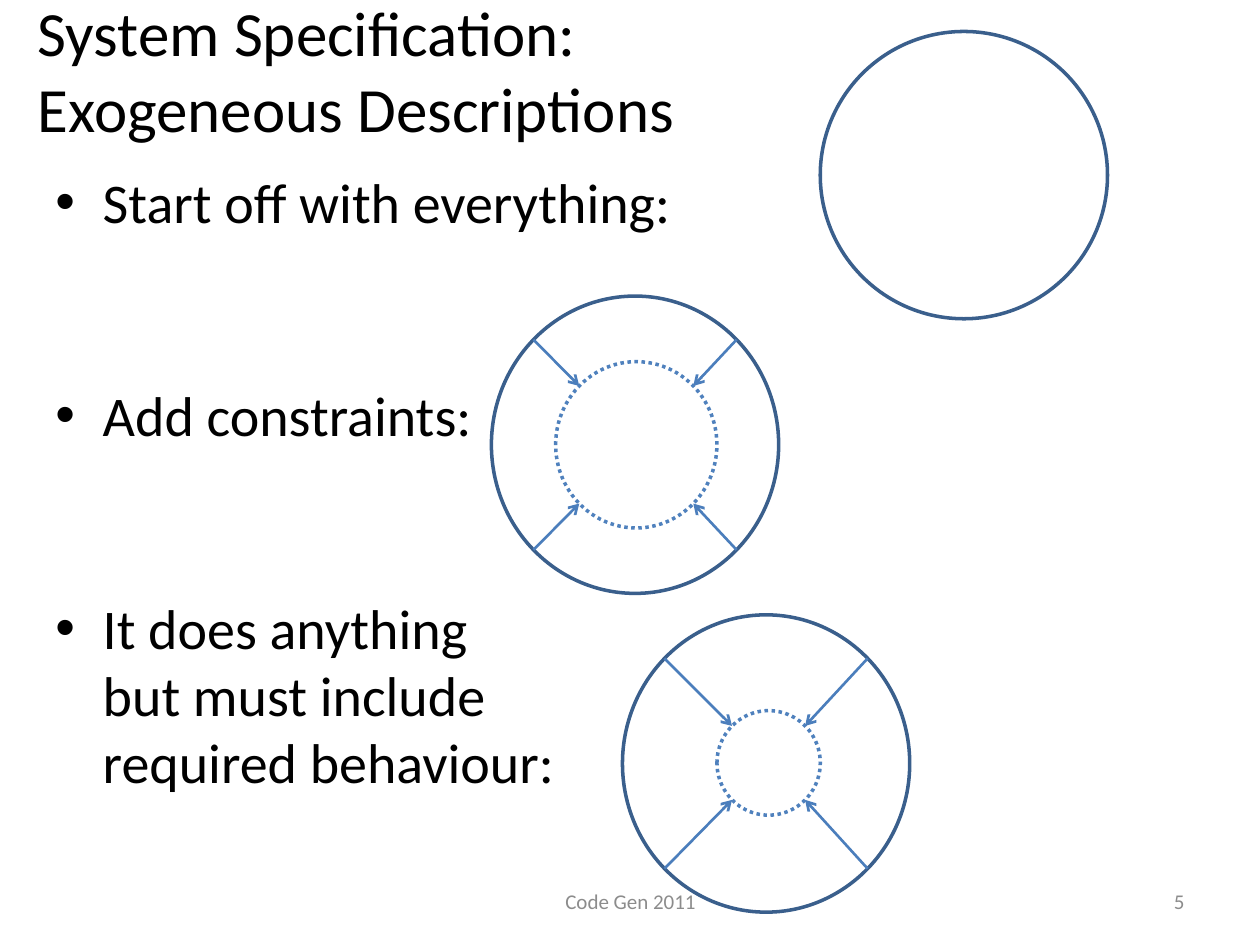
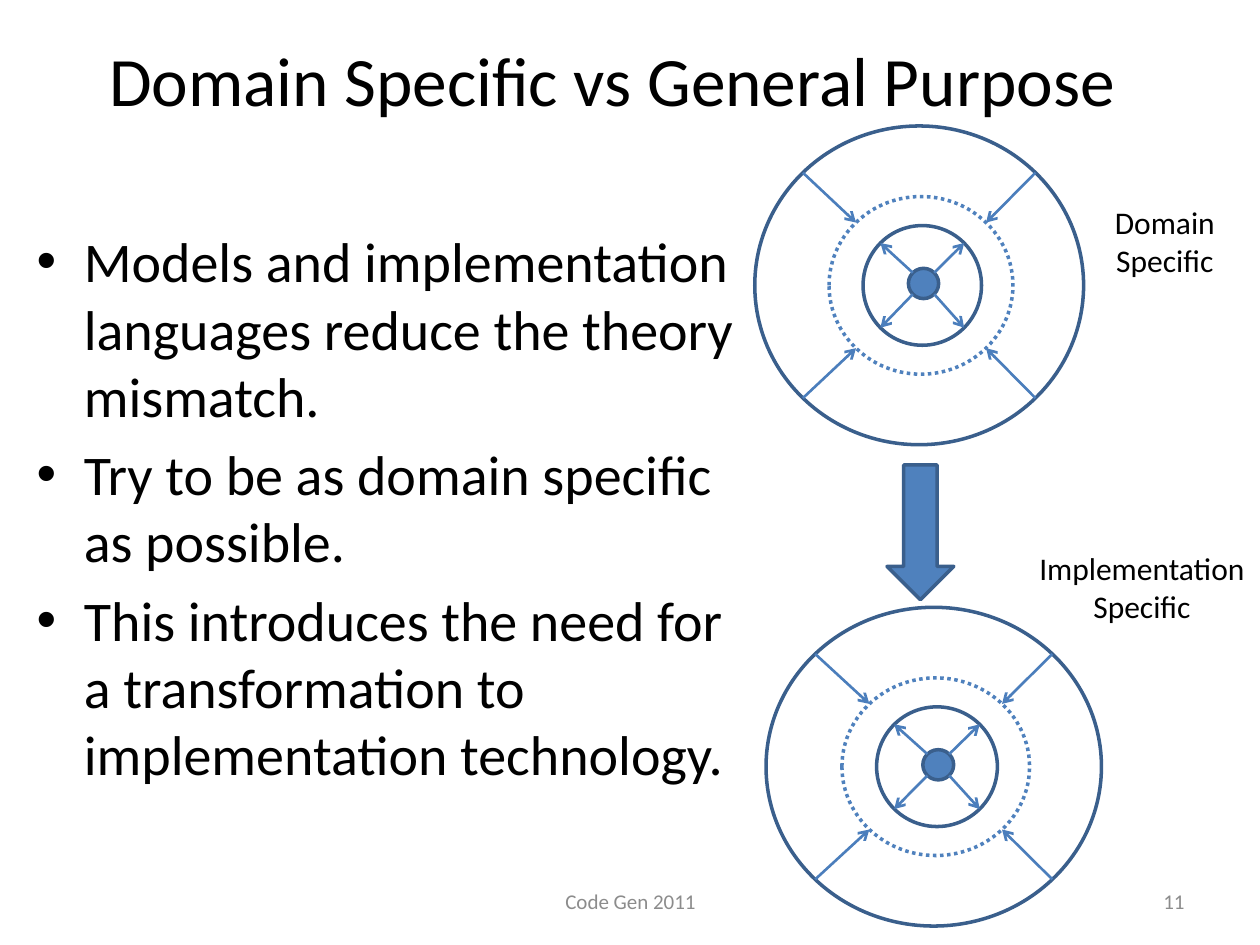
from math import sqrt

from lxml.etree import SubElement
from pptx import Presentation
from pptx.dml.color import RGBColor
from pptx.enum.dml import MSO_LINE_DASH_STYLE as Dash
from pptx.enum.shapes import MSO_CONNECTOR as Connector, MSO_SHAPE as Shape
from pptx.enum.text import MSO_ANCHOR as Anchor, MSO_AUTO_SIZE as AutoSize, PP_ALIGN as Align
from pptx.oxml.ns import qn
from pptx.util import Inches, Pt

COLUMNS, ROWS = 10, 7.5
CELL = Inches(1)  # the slide is a grid of square cells

BLACK = RGBColor(0x00, 0x00, 0x00)
GREY = RGBColor(0x8C, 0x8C, 0x8C)
OUTLINE = RGBColor(0x3A, 0x5F, 0x8C)
ACCENT = RGBColor(0x4F, 0x81, 0xBD)
ARROW = RGBColor(0x4B, 0x7E, 0xBC)

FONT = "Calibri"
FOOTER = "Code Gen 2011"
FOOTER_ROW, FOOTER_HEIGHT = 6.95, 0.4
BODY_SIZE = 32
LINE_HEIGHT = 1.2
BODY_SPACING = 0.2

# Share of an ellipse's half axis at which its diagonal point lies
DIAGONAL = 1 / sqrt(2)
CORNERS = ((1, -1), (1, 1), (-1, -1), (-1, 1))

# Nested ellipses of a full wheel, measured from the left and top of the outer one
WHEEL = {
    "outer": (0, 0, 2.61, 2.53),
    "limit": (0.59, 0.56, 1.46, 1.41),
    "core": (1.22, 1.13, 0.24, 0.24),
    "reach": (0.86, 0.79, 0.94, 0.95),
}


def cells(*lengths):
    return [round(length * CELL) for length in lengths]


def apply(target, values):
    for name, value in values.items():
        setattr(target, name, value)


def write(para, text, size, color=BLACK, align=None):
    para.text = text
    para.alignment = align
    for span in para.runs:
        apply(span.font, {"name": FONT, "size": Pt(size)})
        span.font.color.rgb = color
    for line_break in para._p.findall(qn("a:br")):
        SubElement(line_break, qn("a:rPr"), sz=str(round(size * 100)))


def place(box, frame):
    apply(box, dict(zip(("left", "top", "width", "height"), cells(*frame))))


def add_title(page, text, frame, size, align):
    title = page.shapes.title
    place(title, frame)
    apply(title.text_frame, {"vertical_anchor": Anchor.MIDDLE, "auto_size": AutoSize.NONE})
    write(title.text_frame.paragraphs[0], text, size, align=align)


def add_bullets(page, items, frame, skipped_lines=0):
    """Fill the body; skipped_lines widens the gap between items by whole lines."""
    body = page.placeholders[1]
    place(body, frame)
    frame = body.text_frame
    frame.auto_size = AutoSize.NONE
    for number, item in enumerate(items):
        para = frame.add_paragraph() if number else frame.paragraphs[0]
        write(para, item, BODY_SIZE)
        if number and skipped_lines:
            para.space_before = Pt(BODY_SIZE * (skipped_lines * LINE_HEIGHT + BODY_SPACING))


def add_text(page, lines, frame, size, color, aligns, **format_values):
    box = page.shapes.add_textbox(*cells(*frame))
    apply(box.text_frame, format_values)
    for number, (line, align) in enumerate(zip(lines, aligns)):
        para = box.text_frame.add_paragraph() if number else box.text_frame.paragraphs[0]
        write(para, line, size, color, align)


def add_footer(page, number):
    for text, left, width, align in (
        (number, 7.17, 2.33, Align.RIGHT),
        (FOOTER, 3.42, 3.17, Align.CENTER),
    ):
        add_text(page, [text], (left, FOOTER_ROW, width, FOOTER_HEIGHT), 12, GREY, [align],
                 word_wrap=True, vertical_anchor=Anchor.MIDDLE)


def add_label(page, lines, frame):
    add_text(page, lines, frame, 18, BLACK, (Align.LEFT, Align.CENTER),
             word_wrap=False, auto_size=AutoSize.SHAPE_TO_FIT_TEXT)


def add_outlined(shapes, kind, frame, fill=None, line=OUTLINE, dash=None):
    shape = shapes.add_shape(kind, *cells(*frame))
    shape.shadow.inherit = False
    if fill is None:
        shape.fill.background()
    else:
        shape.fill.solid()
        shape.fill.fore_color.rgb = fill
    shape.line.color.rgb = line
    apply(shape.line, {"width": Pt(2), "dash_style": dash})


def diagonal_point(frame, corner):
    left, top, width, height = frame
    across, down = corner
    return (left + width / 2 * (1 + across * DIAGONAL),
            top + height / 2 * (1 + down * DIAGONAL))


def add_diagonal_arrows(shapes, start, end):
    """Join the four diagonal points of one ellipse to those of another."""
    for corner in CORNERS:
        ends = diagonal_point(start, corner) + diagonal_point(end, corner)
        arrow = shapes.add_connector(Connector.STRAIGHT, *cells(*ends))
        arrow.line.color.rgb = ARROW
        arrow.line.width = Pt(1.5)
        SubElement(arrow.line._get_or_add_ln(), qn("a:tailEnd"), type="arrow")
        SubElement(arrow._element.spPr, qn("a:effectLst"))


def add_wheel(page, outer, limit, core=None, reach=None):
    """Arrows press inwards from outer to limit and outwards from core to reach."""
    shapes = page.shapes.add_group_shape().shapes
    add_outlined(shapes, Shape.OVAL, outer)
    add_diagonal_arrows(shapes, outer, limit)
    add_outlined(shapes, Shape.OVAL, limit, line=ACCENT, dash=Dash.ROUND_DOT)
    if core:
        add_outlined(shapes, Shape.OVAL, core, fill=ACCENT)
        add_outlined(shapes, Shape.OVAL, reach)
        add_diagonal_arrows(shapes, core, reach)


def add_full_wheel(page, left, top, stretch=1):
    rings = {
        name: (left + x * stretch, top + y, width * stretch, height)
        for name, (x, y, width, height) in WHEEL.items()
    }
    add_wheel(page, **rings)


def add_exogeneous_page(deck, layout):
    page = deck.slides.add_slide(layout)
    add_title(page, "System Specification:\nExogeneous Descriptions",
              (0.2, 0.12, 9.8, 0.86), 36, Align.LEFT)
    add_bullets(page, (
        "Start off with everything:",
        "Add constraints:",
        "It does anything\nbut must include\nrequired behaviour:",
    ), (0.34, 1.28, 9, 4.95), skipped_lines=2)
    add_outlined(page.shapes, Shape.OVAL, (6.51, 0.25, 2.28, 2.28))
    add_wheel(page, (3.9, 2.35, 2.28, 2.36), (4.41, 2.87, 1.28, 1.32))
    add_wheel(page, (4.94, 4.88, 2.28, 2.36), (5.69, 5.64, 0.82, 0.83))
    add_footer(page, "5")


def add_domain_page(deck, layout):
    page = deck.slides.add_slide(layout)
    add_title(page, "Domain Specific vs General Purpose",
              (0.36, 0, 9, 1.25), 39.6, Align.CENTER)
    add_bullets(page, (
        "Models and implementation\nlanguages reduce the theory\nmismatch.",
        "Try to be as domain specific\nas possible.",
        "This introduces the need for\na transformation to\nimplementation technology.",
    ), (0.19, 1.75, 9, 4.95))
    add_full_wheel(page, 5.99, 1)
    add_full_wheel(page, 6.08, 4.82, stretch=1.02)
    add_outlined(page.shapes, Shape.DOWN_ARROW, (7.04, 3.69, 0.53, 1.07), fill=ACCENT)
    add_label(page, ("Domain", "Specific"), (8.75, 1.56, 1.06, 0.71))
    add_label(page, ("Implementation", "Specific"), (8.15, 4.31, 1.85, 0.71))
    add_footer(page, "11")


def main():
    deck = Presentation()
    apply(deck, dict(zip(("slide_width", "slide_height"), cells(COLUMNS, ROWS))))
    layout = deck.slide_layouts.get_by_name("Title and Content")
    add_exogeneous_page(deck, layout)
    add_domain_page(deck, layout)
    deck.save("out.pptx")


if __name__ == "__main__":
    main()
